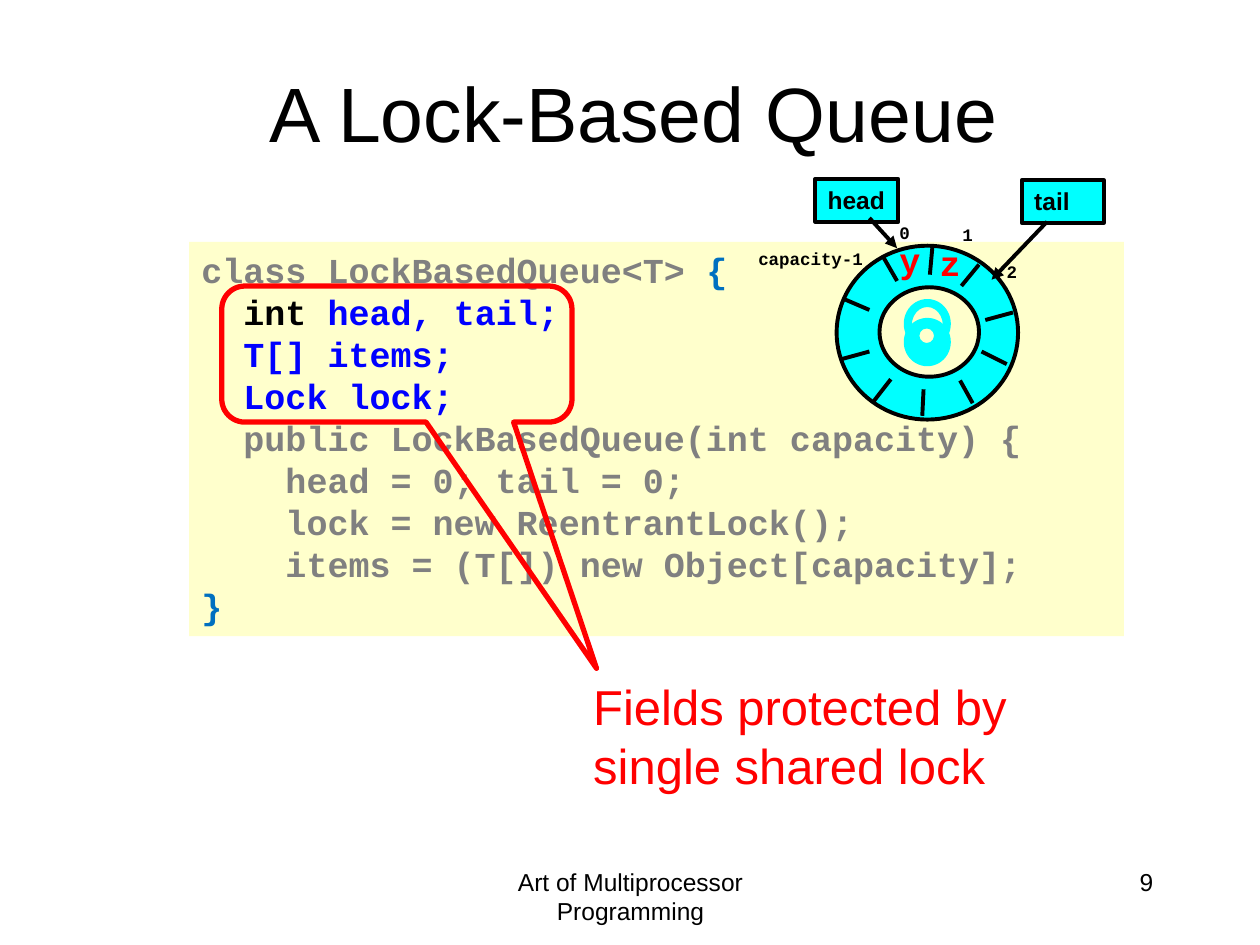
from pptx import Presentation
from pptx import util as u
from pptx.dml.color import RGBColor
from pptx.enum import shapes, text
from pptx.oxml.ns import qn
from lxml import etree

THEME = dict(
    black="000000", red="FF0000", blue="0000FF", grey="808080", brace="0070C0",
    cyan="00FFFF", cream="FFFFCC", white="FFFFFF",
    sans="Arial", mono="Courier New",
    title=44, note=28, code=20, label=14, index=10,
)

# Content: code lines as (text, colour) runs
CODE = [
    [("class LockBasedQueue<T> ", "grey"), ("{", "brace")],
    [("  int ", "black"), ("head, tail;", "blue")],
    [("  T[] items;", "blue")],
    [("  Lock lock;", "blue")],
    [("  public LockBasedQueue(int capacity) {", "grey")],
    [("    head = 0; tail = 0;", "grey")],
    [("    lock = new ReentrantLock();", "grey")],
    [("    items = (T[]) new Object[capacity];", "grey")],
    [("}", "brace")],
]
TITLE = "A Lock-Based Queue"
NOTE = "Fields protected by single shared lock"
FOOTER, PAGE = "Art of Multiprocessor Programming", "9"

# Ring: slot dividers as x1, y1, x2, y2
TICKS = [
    (6.93, 3.19, 7.07, 3.01), (7.63, 2.27, 7.77, 2.1),
    (7.82, 2.54, 8.04, 2.48), (6.68, 2.85, 6.9, 2.79),
    (6.69, 2.37, 6.9, 2.46), (7.79, 2.79, 7.99, 2.89),
    (7.01, 2.04, 7.12, 2.23), (7.4, 1.96, 7.38, 2.18),
    (7.62, 3.02, 7.72, 3.2), (7.33, 3.09, 7.32, 3.3),
]
INDICES = [("0", 7.04, 1.71, 0.28), ("1", 7.54, 1.73, 0.28),
           ("capacity-1", 5.92, 1.92, 1.04), ("2", 7.89, 2.02, 0.28)]
ITEMS = [("y", 7.04, 1.84), ("z", 7.36, 1.87)]
POINTERS = [  # name, box, arrow
    ("head", (6.47, 1.42, 0.66, 0.34), (6.9, 1.73, 7.12, 1.97)),
    ("tail", (8.11, 1.43, 0.65, 0.34), (8.31, 1.76, 7.87, 2.22)),
]
PADLOCK = [  # ovals, back to front
    ((7.18, 2.38, 0.36, 0.38), "cyan"), ((7.23, 2.43, 0.26, 0.3), "cream"),
    ((7.18, 2.53, 0.36, 0.37), "cyan"), ((7.29, 2.6, 0.13, 0.13), "cream"),
]
KEYHOLE = [(7.32, 2.82), (7.34, 2.71), (7.39, 2.71), (7.41, 2.82)]

KIND = shapes.MSO_SHAPE
ALIGN = text.PP_ALIGN

prs = Presentation()
prs.slide_width, prs.slide_height = u.Inches(10), u.Inches(7.5)
slide = prs.slides.add_slide(prs.slide_layouts[6])


def rgb(name):
    return RGBColor.from_string(THEME[name])


def inches(nums):
    return [u.Inches(n) for n in nums]


def paint(shape, fill=None, line=None, width=2.25):
    shape.shadow.inherit = False
    if fill:
        shape.fill.solid()
        shape.fill.fore_color.rgb = rgb(fill)
    else:
        shape.fill.background()
    if line:
        shape.line.color.rgb = rgb(line)
        shape.line.width = u.Pt(width)
    else:
        shape.line.fill.background()
    return shape


def draw(kind, box, *look):
    return paint(slide.shapes.add_shape(kind, *inches(box)), *look)


def write(shape, lines, size, face="sans", bold=False, align=ALIGN.LEFT,
          wrap=True, anchor=text.MSO_ANCHOR.TOP):
    frame = shape.text_frame
    frame.word_wrap = wrap
    frame.vertical_anchor = anchor
    for i, runs in enumerate(lines):
        para = frame.add_paragraph() if i else frame.paragraphs[0]
        para.alignment = align
        font = para.font
        font.name, font.size, font.bold = THEME[face], u.Pt(THEME[size]), bold
        font.color.rgb = rgb(runs[0][1])
        for words, color in runs:
            run = para.add_run()
            run.text = words
            if color != runs[0][1]:
                run.font.color.rgb = rgb(color)
    return frame


def label(box, words, size, color="black", **style):
    area = slide.shapes.add_textbox(*inches(box))
    return write(area, [[(words, color)]], size, **style)


def stroke(ends, arrow=False):
    line = slide.shapes.add_connector(shapes.MSO_CONNECTOR.STRAIGHT, *inches(ends))
    line.line.color.rgb = rgb("black")
    line.line.width = u.Pt(2.25)
    if arrow:
        etree.SubElement(line.line._get_or_add_ln(), qn("a:tailEnd"), type="triangle")
    etree.SubElement(line._element.spPr, qn("a:effectLst"))


# Code panel
panel = draw(KIND.RECTANGLE, (1.5, 1.92, 7.42, 3.13), "cream")
write(panel, CODE, "code", "mono", True)

# Footer, page number and title
label((3.42, 6.83, 3.17, 0.5), FOOTER, "label", align=ALIGN.CENTER)
label((7.17, 6.83, 2.08, 0.5), PAGE, "label", align=ALIGN.RIGHT)
head = label((0.5, 0.26, 8.21, 1.26), TITLE, "title", align=ALIGN.CENTER,
             anchor=text.MSO_ANCHOR.MIDDLE)
head.margin_left = u.Inches(0.95)

# Callout around the fields, with its note
call = draw(KIND.ROUNDED_RECTANGULAR_CALLOUT, (1.76, 2.27, 2.78, 1.08), None, "red", 3)
for i, value in enumerate((0.57, 2.31, 0.17)):
    call.adjustments[i] = value
label((4.61, 5.32, 4.31, 1.04), NOTE, "note", "red")

# Ring buffer
draw(KIND.OVAL, (6.64, 1.95, 1.44, 1.38), "cyan", "black")
draw(KIND.OVAL, (6.98, 2.28, 0.79, 0.71), "cream", "black")
for ends in TICKS:
    stroke(ends)
for words, x, y, w in INDICES:
    label((x, y, w, 0.27), words, "index", face="mono", bold=True, wrap=False)

# Head and tail pointers
for name, box, ends in POINTERS:
    tag = draw(KIND.RECTANGLE, box, "cyan", "black")
    write(tag, [[(name, "black")]], "label", bold=True, wrap=name == "tail")
    stroke(ends, arrow=True)

# Queued items
for words, x, y in ITEMS:
    label((x, y, 0.37, 0.43), words, "code", "red", face="mono", bold=True, wrap=False)

# Padlock
for box, fill in PADLOCK:
    draw(KIND.OVAL, box, fill, "cyan", 1)
pen = slide.shapes.build_freeform(*KEYHOLE[0], scale=u.Inches(1))
pen.add_line_segments(KEYHOLE[1:], close=True)
paint(pen.convert_to_shape(), "cream", "white", 1)

prs.save("out.pptx")
